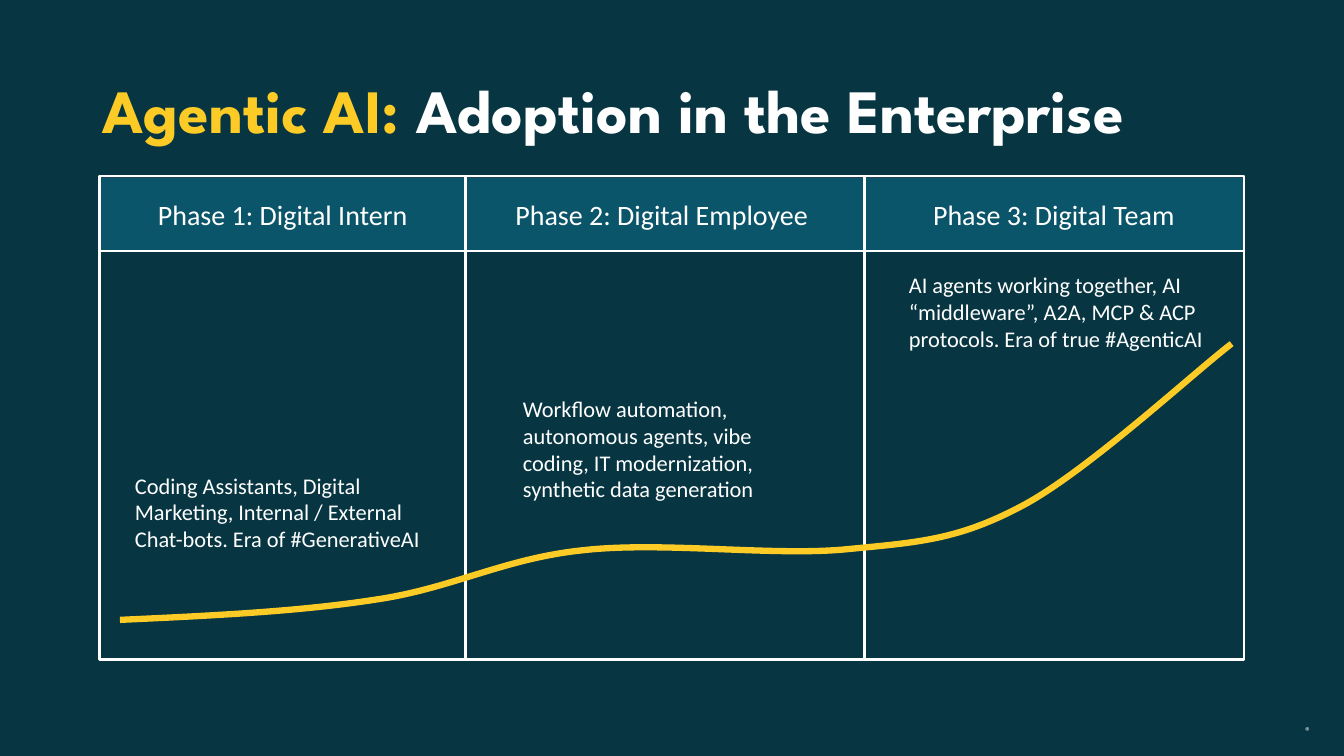
from lxml.etree import SubElement
from pptx import Presentation
from pptx.dml.color import RGBColor
from pptx.enum.shapes import MSO_CONNECTOR, MSO_SHAPE
from pptx.enum.text import MSO_ANCHOR, PP_ALIGN
from pptx.oxml.ns import qn
from pptx.util import Pt

NIGHT = RGBColor(0x07, 0x36, 0x42)
TEAL = RGBColor(0x0A, 0x55, 0x69)
SLATE = RGBColor(0x26, 0x41, 0x59)
YELLOW = RGBColor(0xFD, 0xCB, 0x26)
WHITE = RGBColor(0xFF, 0xFF, 0xFF)

FRAME_LEFT, FRAME_RIGHT = 71.3, 888.6
FRAME_TOP, FRAME_BOTTOM = 125.8, 470.9
HEADER_BOTTOM = 179.3
DIVIDERS = (332.6, 617.8)

# Heading, heading left, description, description left and top
PHASES = (
    ("Phase 1: Digital Intern", 71.3,
     "Coding Assistants, Digital Marketing, Internal / External Chat-bots. "
     "Era of #GenerativeAI", 89.3, 333.4),
    ("Phase 2: Digital Employee", 342,
     "Workflow automation, autonomous agents, vibe coding, IT modernization, "
     "synthetic data generation", 366.5, 278.6),
    ("Phase 3: Digital Team", 622.1,
     "AI agents working together, AI “middleware”, A2A, MCP & ACP protocols. "
     "Era of true #AgenticAI", 642.2, 190.1),
)

CURVE_START = (85.7, 442.8)
# Each segment: two control points and the end point
CURVE_SEGMENTS = (
    ((149, 439.9), (212.4, 437), (267.8, 428.4)),
    ((322.6, 420.5), (360, 398.9), (416.2, 393.1)),
    ((472.3, 386.6), (551.5, 397.4), (604.1, 392.4)),
    ((655.9, 387.4), (684, 385.9), (730.1, 361.4)),
    ((776.2, 337), (852.5, 266.4), (879.8, 245.5)),
)


def add_text(slide, left, top, width, height, parts, size, font="Calibri",
             bold=False, align=PP_ALIGN.LEFT, inset=True):
    """Add a one-paragraph text box; parts is a list of (text, colour)."""
    box = slide.shapes.add_textbox(Pt(left), Pt(top), Pt(width), Pt(height))
    frame = box.text_frame
    frame.word_wrap = True
    if not inset:
        frame.margin_left = frame.margin_right = 0
        frame.margin_top = frame.margin_bottom = 0
    paragraph = frame.paragraphs[0]
    paragraph.alignment = align
    for text, colour in parts:
        run = paragraph.add_run()
        run.text = text
        run.font.name = font
        run.font.size = Pt(size)
        run.font.bold = bold
        run.font.color.rgb = colour
    return frame


def add_box(slide, bottom, line_colour, fill=None):
    """Add a rectangle as wide as the frame, from its top down to bottom."""
    box = slide.shapes.add_shape(
        MSO_SHAPE.RECTANGLE, Pt(FRAME_LEFT), Pt(FRAME_TOP),
        Pt(FRAME_RIGHT - FRAME_LEFT), Pt(bottom - FRAME_TOP))
    box.shadow.inherit = False
    if fill is None:
        box.fill.background()
    else:
        box.fill.solid()
        box.fill.fore_color.rgb = fill
    box.line.color.rgb = line_colour
    box.line.width = Pt(2)


def add_rule(slide, x1, y1, x2, y2):
    rule = slide.shapes.add_connector(
        MSO_CONNECTOR.STRAIGHT, Pt(x1), Pt(y1), Pt(x2), Pt(y2))
    rule.line.color.rgb = WHITE
    rule.line.width = Pt(2)
    SubElement(rule._element.spPr, qn("a:effectLst"))


def add_curve(slide, start, segments):
    """Add an open freeform through the end points, bent by the controls."""
    builder = slide.shapes.build_freeform(Pt(start[0]), Pt(start[1]))
    builder.add_line_segments(
        [(Pt(x), Pt(y)) for *_, (x, y) in segments], close=False)
    curve = builder.convert_to_shape()
    curve.shadow.inherit = False
    curve.fill.background()
    curve.line.color.rgb = YELLOW
    curve.line.width = Pt(4.5)
    outline = next(curve._element.iter(qn("a:path")))
    for straight in outline.findall(qn("a:lnTo")):
        outline.remove(straight)
    for segment in segments:
        bend = SubElement(outline, qn("a:cubicBezTo"))
        for x, y in segment:
            SubElement(bend, qn("a:pt"), x=str(Pt(x) - curve.left),
                       y=str(Pt(y) - curve.top))


def add_title(slide):
    title = add_text(slide, 66.2, 28.8, 828, 104.4,
                     [("Agentic AI: ", YELLOW),
                      ("Adoption in the Enterprise", WHITE)],
                     44, font="League Spartan", bold=True)
    title.vertical_anchor = MSO_ANCHOR.MIDDLE
    title.paragraphs[0].line_spacing = 0.9


def add_registered_mark(slide):
    mark = add_text(slide, 932.4, 515.5, 13, 17.3, [("®", WHITE)], 14,
                    inset=False)
    superscript = mark.paragraphs[0].runs[0]._r.get_or_add_rPr()
    superscript.set("baseline", "30000")


def main():
    deck = Presentation()
    deck.slide_width, deck.slide_height = Pt(960), Pt(540)
    slide = deck.slides.add_slide(deck.slide_layouts[6])
    slide.background.fill.solid()
    slide.background.fill.fore_color.rgb = NIGHT

    add_registered_mark(slide)
    add_box(slide, HEADER_BOTTOM, SLATE, TEAL)
    add_title(slide)
    add_box(slide, FRAME_BOTTOM, WHITE)
    for x in DIVIDERS:
        add_rule(slide, x, FRAME_TOP, x, FRAME_BOTTOM)
    add_rule(slide, FRAME_LEFT, HEADER_BOTTOM, FRAME_RIGHT, HEADER_BOTTOM)

    for heading, heading_left, description, left, top in PHASES:
        add_text(slide, heading_left, 137.5, 261.4, 31.7,
                 [(heading, WHITE)], 20, align=PP_ALIGN.CENTER)
        add_text(slide, left, top, 228.2, 104.4, [(description, WHITE)], 16)
    add_curve(slide, CURVE_START, CURVE_SEGMENTS)
    deck.save("out.pptx")


if __name__ == "__main__":
    main()
